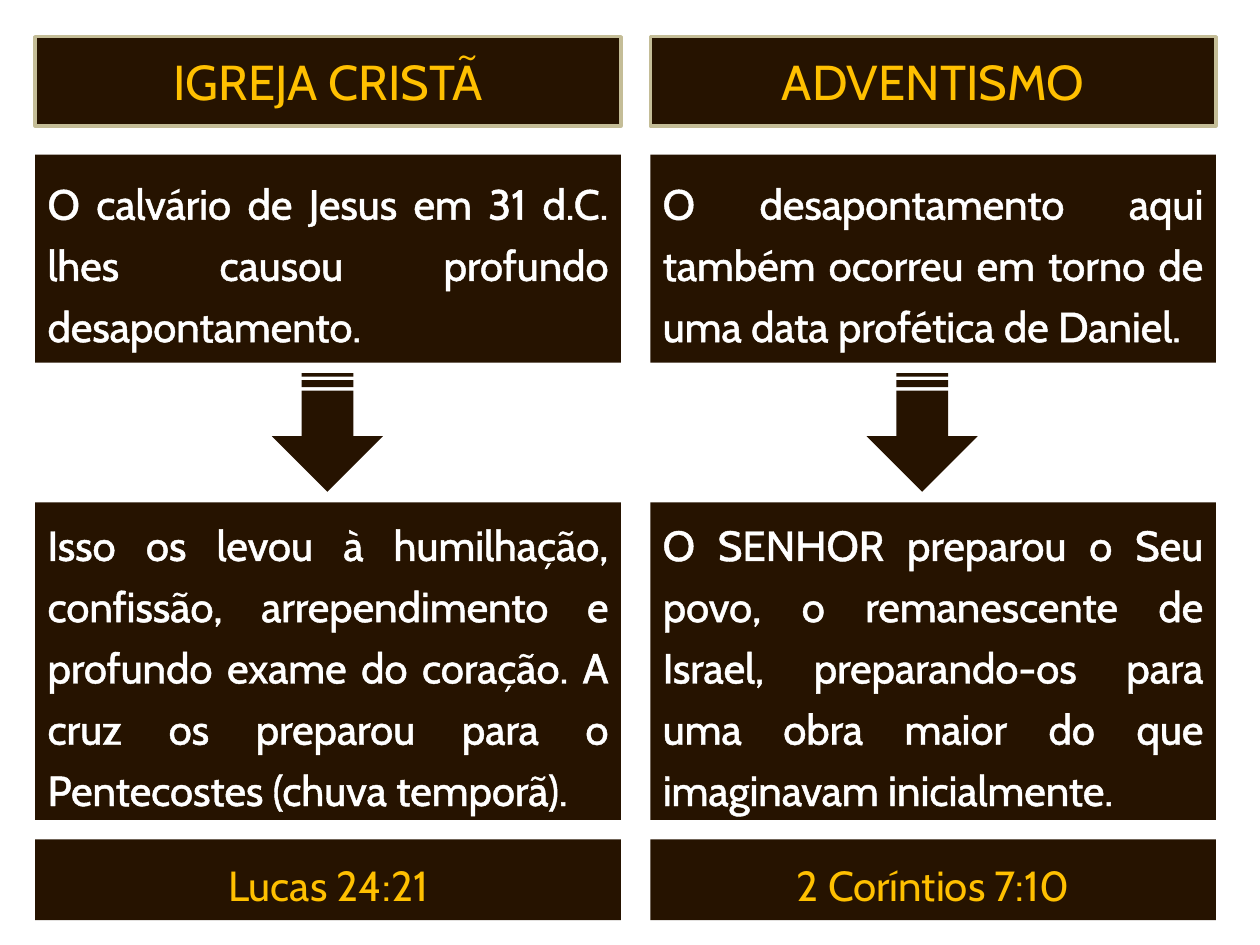
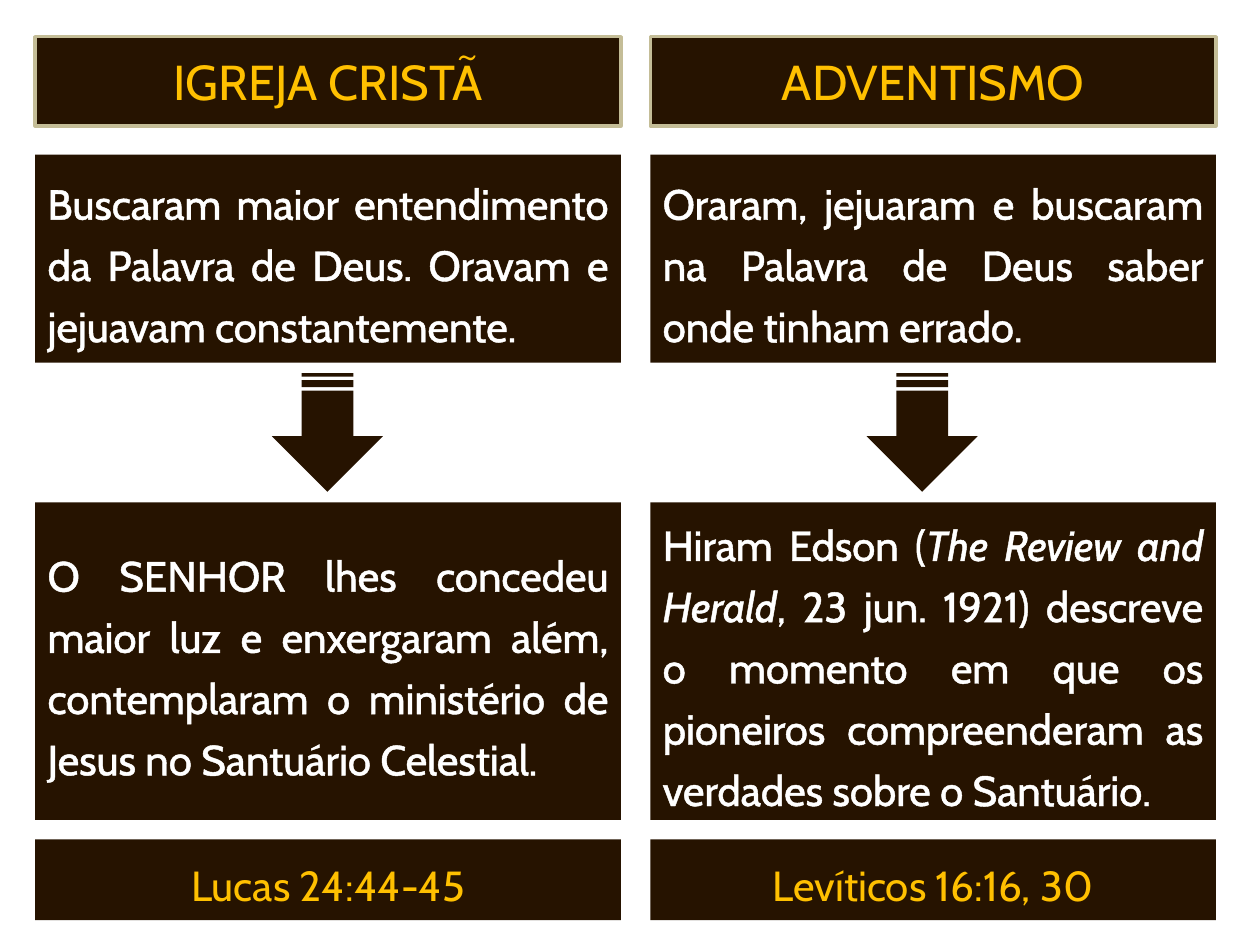
from lxml import etree
from pptx import Presentation
from pptx.dml.color import RGBColor
from pptx.enum.shapes import MSO_SHAPE as SHAPE
from pptx.enum.text import MSO_ANCHOR as ANCHOR, PP_ALIGN as ALIGN
from pptx.oxml.ns import qn
from pptx.util import Cm, Pt

BROWN = RGBColor(0x26, 0x13, 0x00)
SAND = RGBColor(0xC4, 0xBD, 0x97)
GOLD = RGBColor(0xFF, 0xC0, 0x00)
WHITE = RGBColor(0xFF, 0xFF, 0xFF)
FONT = "Cabin"

# Row: (top, height) in cm
HEADING, CAUSE, RESULT, VERSE = (0.74, 1.8), (3.12, 4.19), (10.13, 6.4), (16.92, 1.63)
ARROW_LENGTH, ARROW_WIDTH = 2.39, 2.24

# Column: heading, left, width, centre of the arrow measured from the left, in cm
COLUMNS = [
    ("IGREJA CRISTÃ", 0.71, 11.81, 5.89),
    ("ADVENTISMO", 13.11, 11.4, 5.48),
]

# For each slide, one (cause, result, verse) per column; a result is a list
# of runs, of which every second one is italic
SLIDES = [
    [
        ("O calvário de Jesus em 31 d.C. lhes causou profundo desapontamento.",
         ["Isso os levou à humilhação, confissão, arrependimento e profundo exame do "
          "coração. A cruz os preparou para o Pentecostes (chuva temporã)."],
         "Lucas 24:21"),
        ("O desapontamento aqui também ocorreu em torno de uma data profética de Daniel.",
         ["O SENHOR preparou o Seu povo, o remanescente de Israel, preparando-os para "
          "uma obra maior do que imaginavam inicialmente."],
         "2 Coríntios 7:10"),
    ],
    [
        ("Buscaram maior entendimento da Palavra de Deus. Oravam e jejuavam constantemente.",
         ["O SENHOR lhes concedeu maior luz e enxergaram além, contemplaram o ministério "
          "de Jesus no Santuário Celestial."],
         "Lucas 24:44-45"),
        ("Oraram, jejuaram e buscaram na Palavra de Deus saber onde tinham errado.",
         ["Hiram Edson (", "The Review and Herald",
          ", 23 jun. 1921) descreve o momento em que os pioneiros compreenderam as "
          "verdades sobre o Santuário."],
         "Levíticos 16:16, 30"),
    ],
]


def outline_text(r, color):
    """Draw the letters of a run with a thin edge of the given colour."""
    ln = etree.Element(qn("a:ln"), w=str(Pt(1.45)))
    fill = etree.SubElement(ln, qn("a:solidFill"))
    etree.SubElement(fill, qn("a:srgbClr"), val=str(color))
    r.font._element.insert(0, ln)


def add_brown_shape(slide, kind, left, top, width, height):
    sp = slide.shapes.add_shape(kind, Cm(left), Cm(top), Cm(width), Cm(height))
    sp.shadow.inherit = False
    sp.fill.solid()
    sp.fill.fore_color.rgb = BROWN
    sp.line.fill.background()
    return sp


def add_panel(slide, left, width, row, texts, color=WHITE, align=ALIGN.JUSTIFY,
              size=24, spacing=Pt(35)):
    top, height = row
    sp = add_brown_shape(slide, SHAPE.RECTANGLE, left, top, width, height)
    tf = sp.text_frame
    tf.word_wrap = True
    tf.vertical_anchor = ANCHOR.MIDDLE
    p = tf.paragraphs[0]
    p.alignment = align
    p.line_spacing = spacing
    for i, text in enumerate(texts):
        r = p.add_run()
        r.text = text
        r.font.name = FONT
        r.font.size = Pt(size)
        r.font.italic = i % 2 == 1
        r.font.color.rgb = color
        outline_text(r, color)
    return sp


def add_heading(slide, left, width, text):
    sp = add_panel(slide, left, width, HEADING, [text], GOLD, ALIGN.CENTER, 28, None)
    sp.line.color.rgb = SAND
    sp.line.width = Pt(2)


def add_down_arrow(slide, center):
    """Place a striped arrow halfway between the cause and the result."""
    middle = (sum(CAUSE) + RESULT[0]) / 2
    sp = add_brown_shape(slide, SHAPE.STRIPED_RIGHT_ARROW, center - ARROW_LENGTH / 2,
                         middle - ARROW_WIDTH / 2, ARROW_LENGTH, ARROW_WIDTH)
    sp.adjustments[0] = 0.466
    sp.adjustments[1] = 0.5
    sp.rotation = 90


def add_column(slide, column, content):
    heading, left, width, arrow_center = column
    cause, result, verse = content
    add_heading(slide, left, width, heading)
    add_panel(slide, left, width, CAUSE, [cause])
    add_down_arrow(slide, left + arrow_center)
    add_panel(slide, left, width, RESULT, result)
    add_panel(slide, left, width, VERSE, [verse], GOLD, ALIGN.CENTER)


def main():
    prs = Presentation()
    prs.slide_width, prs.slide_height = Cm(25.4), Cm(19.05)
    for contents in SLIDES:
        slide = prs.slides.add_slide(prs.slide_layouts[6])
        for column, content in zip(COLUMNS, contents):
            add_column(slide, column, content)
    prs.save("out.pptx")


if __name__ == "__main__":
    main()
